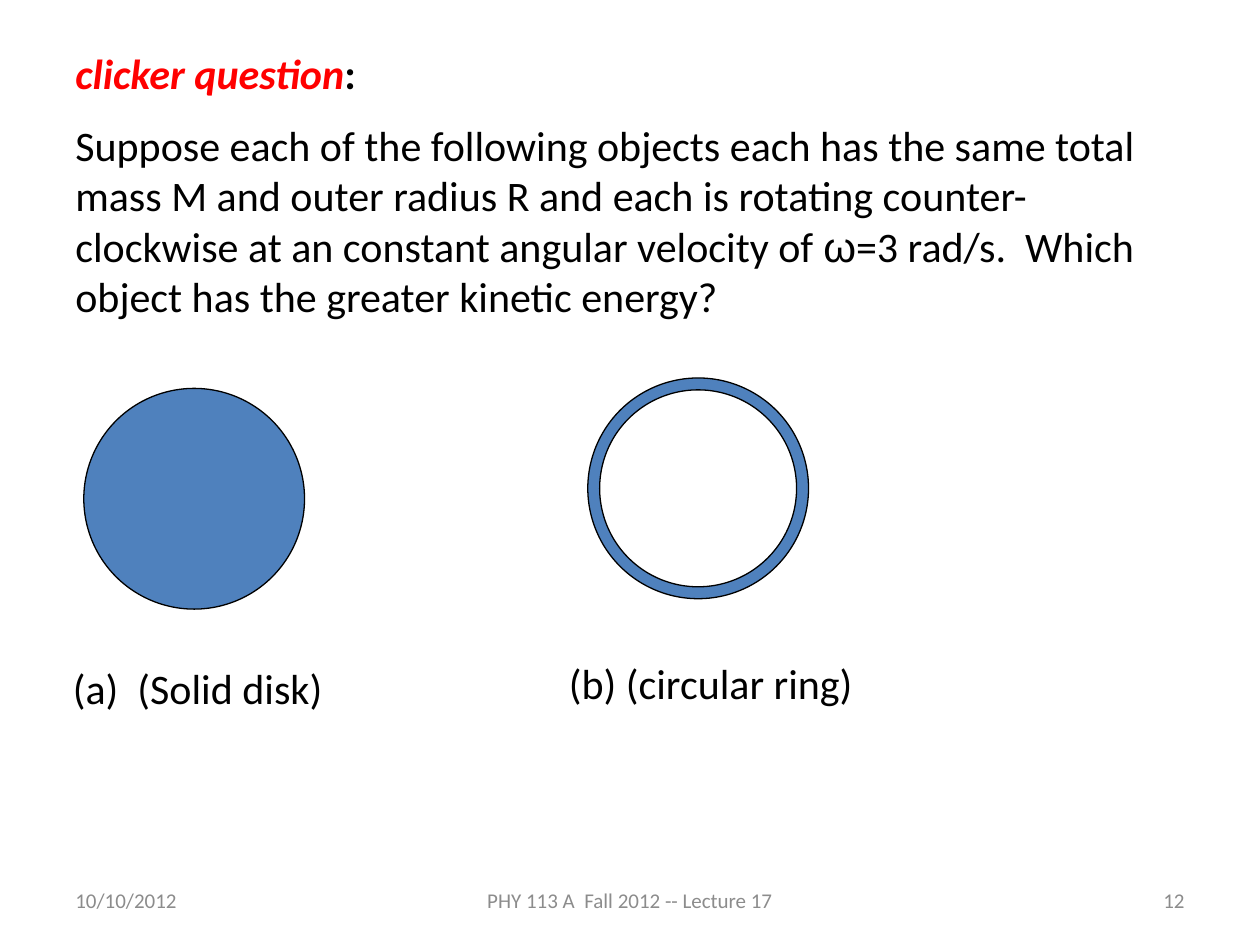
from dataclasses import dataclass

from pptx import Presentation
from pptx.dml.color import RGBColor
from pptx.enum.shapes import MSO_SHAPE
from pptx.enum.text import MSO_ANCHOR, PP_ALIGN
from pptx.util import Cm, Pt

LEFT, CENTER, RIGHT = PP_ALIGN.LEFT, PP_ALIGN.CENTER, PP_ALIGN.RIGHT
TOP, MIDDLE = MSO_ANCHOR.TOP, MSO_ANCHOR.MIDDLE
DISK, RING = MSO_SHAPE.OVAL, MSO_SHAPE.DONUT


@dataclass(frozen=True)
class Theme:
    font: str = "Calibri"
    symbol_font: str = "Arial"
    body_size: int = 24
    footer_size: int = 12
    text: RGBColor = RGBColor(0, 0, 0)
    accent: RGBColor = RGBColor(0xFF, 0, 0)
    muted: RGBColor = RGBColor(0x8C, 0x8C, 0x8C)
    object_fill: RGBColor = RGBColor(0x4F, 0x81, 0xBD)
    outline: RGBColor = RGBColor(0, 0, 0)
    outline_width: float = 0.75


THEME = Theme()

QUESTION = [
    [
        ("clicker question", {"color": THEME.accent, "bold": True, "italic": True}),
        (":", {"bold": True}),
    ],
    [
        ("Suppose each of the following objects each has the same total mass M and "
         "outer radius R and each is rotating counter-clockwise at an constant "
         "angular velocity of ", {}),
        ("ω", {"font": THEME.symbol_font}),
        ("=3 rad/s.  Which object has the greater kinetic energy?", {}),
    ],
]
QUESTION_BOX = (1.27, 0.84, 22.43, 5.89)

FOOTERS = [
    ("10/10/2012", LEFT, 1.27, 5.92),
    ("PHY 113 A  Fall 2012 -- Lecture 17", CENTER, 8.68, 8.04),
    ("12", RIGHT, 18.21, 5.92),
]
FOOTER_TOP, FOOTER_HEIGHT = 17.65, 1.01

OBJECTS = [
    (DISK, 1.69, 7.83, "(a)  (Solid disk)", (1.22, 13.24, 5.59, 1.27), False),
    (RING, 11.85, 7.62, "(b) (circular ring)", (11.22, 13.12, 7.83, 1.27), True),
]
DIAMETER = 4.45
RING_THICKNESS = 0.24


def add_text(slide, box, paragraphs, size=THEME.body_size, color=THEME.text,
             alignment=LEFT, anchor=TOP, wrap=True):
    frame = slide.shapes.add_textbox(*map(Cm, box)).text_frame
    frame.word_wrap = wrap
    frame.vertical_anchor = anchor
    for index, runs in enumerate(paragraphs):
        paragraph = frame.add_paragraph() if index else frame.paragraphs[0]
        paragraph.alignment = alignment
        if index:
            paragraph.space_before = Pt(size / 2)
        for text, style in runs:
            run = paragraph.add_run()
            run.text = text
            run.font.name = style.get("font", THEME.font)
            run.font.size = Pt(size)
            run.font.bold = style.get("bold", False)
            run.font.italic = style.get("italic", False)
            run.font.color.rgb = style.get("color", color)


def add_object(slide, kind, left, top):
    shape = slide.shapes.add_shape(kind, Cm(left), Cm(top), Cm(DIAMETER), Cm(DIAMETER))
    shape.shadow.inherit = False
    shape.fill.solid()
    shape.fill.fore_color.rgb = THEME.object_fill
    shape.line.color.rgb = THEME.outline
    shape.line.width = Pt(THEME.outline_width)
    if kind == RING:
        shape.adjustments[0] = RING_THICKNESS / DIAMETER


def main():
    presentation = Presentation()
    presentation.slide_width = Cm(25.4)
    presentation.slide_height = Cm(19.05)
    slide = presentation.slides.add_slide(presentation.slide_layouts[6])

    for text, alignment, left, width in FOOTERS:
        add_text(slide, (left, FOOTER_TOP, width, FOOTER_HEIGHT), [[(text, {})]],
                 THEME.footer_size, THEME.muted, alignment, MIDDLE)

    add_text(slide, QUESTION_BOX, QUESTION)

    for kind, left, top, label, label_box, wrap in OBJECTS:
        add_object(slide, kind, left, top)
        add_text(slide, label_box, [[(label, {})]], wrap=wrap)

    presentation.save("out.pptx")


if __name__ == "__main__":
    main()
